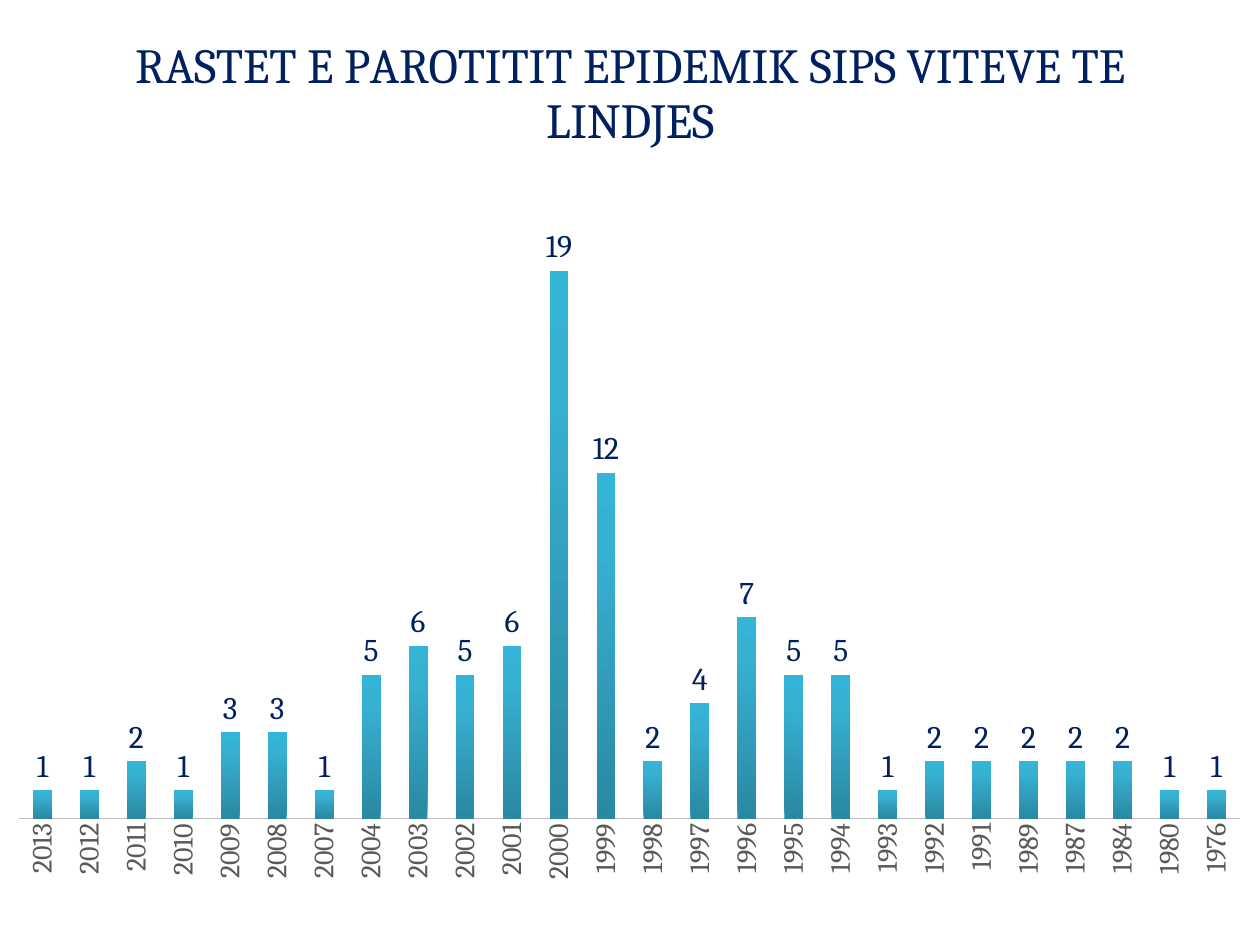
"""Build a slide with a column chart of epidemic parotitis cases by year of birth."""
from typing import Any, NamedTuple

from lxml import etree
from pptx import Presentation
from pptx.chart.chart import Chart
from pptx.chart.data import CategoryChartData
from pptx.dml.color import RGBColor
from pptx.enum.chart import XL_CHART_TYPE, XL_LABEL_POSITION, XL_TICK_MARK
from pptx.oxml import parse_xml
from pptx.oxml.ns import nsdecls, qn
from pptx.util import Emu, Pt

COLUMNS = XL_CHART_TYPE.COLUMN_CLUSTERED
OUTSIDE_END = XL_LABEL_POSITION.OUTSIDE_END
NO_TICKS = XL_TICK_MARK.NONE

PIXEL = 914400 // 126
WIDTH, HEIGHT = 1260, 945
NAVY = RGBColor(0x00, 0x20, 0x60)
GRAY = RGBColor(0x59, 0x59, 0x59)
LIGHT_GRAY = RGBColor(0xBF, 0xBF, 0xBF)
DARK_TEAL = RGBColor(0x2A, 0x88, 0xA2)
TEAL = RGBColor(0x37, 0xB1, 0xD2)
BRIGHT_TEAL = RGBColor(0x34, 0xB4, 0xD6)

TITLE = "RASTET E PAROTITIT EPIDEMIK SIPS VITEVE TE LINDJES"
TITLE_FORMAT = {"name": "Cambria", "size": Pt(28), "bold": False}
YEAR_FORMAT = {"name": "Cambria", "size": Pt(16), "bold": False}
LABEL_FORMAT = {"name": "Cambria", "size": Pt(18), "bold": False}


class YearCases(NamedTuple):
    year: str
    cases: int


class GradientStop(NamedTuple):
    percent: int
    color: RGBColor


class PlotArea(NamedTuple):
    x: int
    y: int
    w: int
    h: int


CASES = [
    YearCases("2013", 1), YearCases("2012", 1), YearCases("2011", 2),
    YearCases("2010", 1), YearCases("2009", 3), YearCases("2008", 3),
    YearCases("2007", 1), YearCases("2004", 5), YearCases("2003", 6),
    YearCases("2002", 5), YearCases("2001", 6), YearCases("2000", 19),
    YearCases("1999", 12), YearCases("1998", 2), YearCases("1997", 4),
    YearCases("1996", 7), YearCases("1995", 5), YearCases("1994", 5),
    YearCases("1993", 1), YearCases("1992", 2), YearCases("1991", 2),
    YearCases("1989", 2), YearCases("1987", 2), YearCases("1984", 2),
    YearCases("1980", 1), YearCases("1976", 1),
]
STOPS = [GradientStop(0, DARK_TEAL), GradientStop(80, TEAL), GradientStop(100, BRIGHT_TEAL)]
PLOT_AREA = PlotArea(19, 242, 1221, 577)


def px(length: int) -> Emu:
    return Emu(length * PIXEL)


def set_format(target: Any, values: dict[str, Any]) -> None:
    for name, value in values.items():
        setattr(target, name, value)


def style_font(font: Any, values: dict[str, Any], color: RGBColor) -> None:
    set_format(font, values)
    font.color.rgb = color


def place_plot(chart: Chart, area: PlotArea) -> None:
    plot_area = chart.plots[0]._element.getparent()
    for old_layout in plot_area.findall(qn("c:layout")):
        plot_area.remove(old_layout)
    layout = etree.Element(qn("c:layout"))
    manual = etree.SubElement(layout, qn("c:manualLayout"))
    settings = {
        "layoutTarget": "inner", "xMode": "edge", "yMode": "edge",
        "x": area.x / WIDTH, "y": area.y / HEIGHT,
        "w": area.w / WIDTH, "h": area.h / HEIGHT,
    }
    for name, value in settings.items():
        etree.SubElement(manual, qn(f"c:{name}"), val=str(value))
    plot_area.insert(0, layout)


def fill_with_gradient(series: Any, stops: list[GradientStop]) -> None:
    stop_xml = "".join(
        f'<a:gs pos="{stop.percent * 1000}"><a:srgbClr val="{stop.color}"/></a:gs>'
        for stop in stops
    )
    properties = series.format.fill._xPr
    properties.insert(0, parse_xml(
        f'<a:gradFill {nsdecls("a")}><a:gsLst>{stop_xml}</a:gsLst>'
        '<a:lin ang="16200000" scaled="0"/></a:gradFill>'
    ))


def style_title(chart: Chart) -> None:
    chart.has_title = True
    text_frame = chart.chart_title.text_frame
    text_frame.text = TITLE
    style_font(text_frame.paragraphs[0].runs[0].font, TITLE_FORMAT, NAVY)


def style_axes(chart: Chart) -> None:
    years = chart.category_axis
    set_format(years, {"major_tick_mark": NO_TICKS, "minor_tick_mark": NO_TICKS,
                       "has_major_gridlines": False})
    years.format.line.color.rgb = LIGHT_GRAY
    years.format.line.width = Pt(0.75)
    style_font(years.tick_labels.font, YEAR_FORMAT, GRAY)
    years._element.find(qn("c:txPr")).find(qn("a:bodyPr")).set("rot", "-5400000")
    set_format(chart.value_axis, {"visible": False, "has_major_gridlines": False,
                                  "minimum_scale": 0, "maximum_scale": 20})


def style_columns(chart: Chart) -> None:
    plot = chart.plots[0]
    set_format(plot, {"gap_width": 150, "overlap": -25, "vary_by_categories": False,
                      "has_data_labels": True})
    labels = plot.data_labels
    set_format(labels, {"show_value": True, "position": OUTSIDE_END})
    style_font(labels.font, LABEL_FORMAT, NAVY)
    fill_with_gradient(plot.series[0], STOPS)


def add_cases_chart(slide: Any) -> None:
    data = CategoryChartData()
    data.categories = [entry.year for entry in CASES]
    data.add_series("Series 1", [entry.cases for entry in CASES])
    chart = slide.shapes.add_chart(COLUMNS, 0, 0, px(WIDTH), px(HEIGHT), data).chart
    chart.has_legend = False
    set_format(chart.font, {"name": "Calibri", "size": Pt(10)})
    style_title(chart)
    style_axes(chart)
    style_columns(chart)
    place_plot(chart, PLOT_AREA)


def main() -> None:
    presentation = Presentation()
    set_format(presentation, {"slide_width": px(WIDTH), "slide_height": px(HEIGHT)})
    slide = presentation.slides.add_slide(presentation.slide_layouts[6])
    add_cases_chart(slide)
    presentation.save("out.pptx")


if __name__ == "__main__":
    main()
